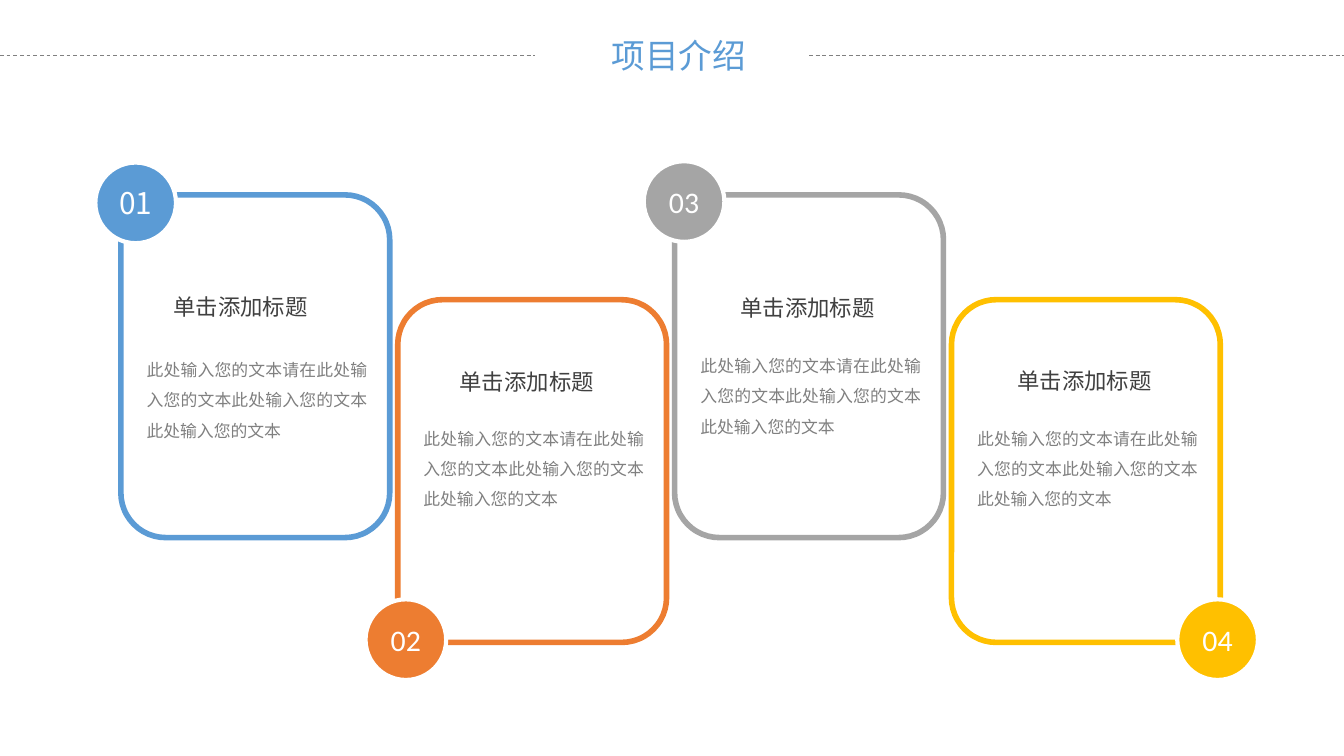
from dataclasses import dataclass

from lxml import etree
from pptx import Presentation
from pptx.dml.color import RGBColor
from pptx.enum.dml import MSO_LINE
from pptx.enum.shapes import MSO_CONNECTOR, MSO_SHAPE
from pptx.enum.text import MSO_ANCHOR, PP_ALIGN
from pptx.oxml.ns import qn
from pptx.util import Inches, Pt

ROUNDED, OVAL = MSO_SHAPE.ROUNDED_RECTANGLE, MSO_SHAPE.OVAL
STRAIGHT = MSO_CONNECTOR.STRAIGHT
DASH = MSO_LINE.DASH
LEFT, CENTER, JUSTIFY = PP_ALIGN.LEFT, PP_ALIGN.CENTER, PP_ALIGN.JUSTIFY
TOP, MIDDLE = MSO_ANCHOR.TOP, MSO_ANCHOR.MIDDLE

COLORS = {
    "blue": "5B9BD5", "orange": "ED7D31", "gray": "A5A5A5", "yellow": "FFC000",
    "heading": "404040", "body": "808080", "rule": "808080", "white": "FFFFFF",
}
CJK, LATIN = "Noto Sans CJK SC", "Calibri"

SLIDE_W = 10
SLIDE_H = SLIDE_W * 9 / 16
RULE_Y, RULE_LENGTH = 0.41, 3.98
GRID_LEFT, COLUMN_PITCH = 0.9, 2.06
ROW_TOPS = (1.45, 2.23)
CARD_W, CARD_H = 2, 2.55
BADGE = 0.6
HEADING_W, HEADING_H = 1.5, 0.28
BODY_INDENT, BODY_W, BODY_H = 0.12, 1.78, 1.14

HEADING = "单击添加标题"
BODY = "此处输入您的文本请在" + "此处输入您的文本" * 3


@dataclass(frozen=True)
class Box:
    left: float
    top: float
    width: float
    height: float

    def emu(self) -> list[int]:
        return [Inches(v) for v in (self.left, self.top, self.width, self.height)]


@dataclass(frozen=True)
class TextStyle:
    size: float
    color: str
    font: str = CJK
    align: PP_ALIGN = LEFT
    anchor: MSO_ANCHOR = TOP
    spacing: float = 1.0
    wrap: bool = True


@dataclass(frozen=True)
class Card:
    """A numbered card; offsets are inches from the card's top-left corner."""
    number: str
    color: str
    row: int
    badge: tuple[float, float]
    heading: tuple[float, float]
    body_top: float
    number_font: str = LATIN


TITLE_STYLE = TextStyle(18, "blue", wrap=False)
HEADING_STYLE = TextStyle(12, "heading", align=CENTER)
BODY_STYLE = TextStyle(9, "body", align=JUSTIFY, anchor=MIDDLE, spacing=1.5)

CARDS = (
    Card("01", "blue", 0, (-0.19, -0.24), (0.14, 0.69), 0.92, CJK),
    Card("02", "orange", 1, (-0.24, 2.23), (0.21, 0.47), 0.65),
    Card("03", "gray", 0, (-0.23, -0.25), (0.24, 0.7), 0.89),
    Card("04", "yellow", 1, (1.68, 2.23), (0.24, 0.46), 0.65),
)


def rgb(name: str) -> RGBColor:
    return RGBColor.from_string(COLORS[name])


def write(shape, text: str, style: TextStyle) -> None:
    frame = shape.text_frame
    frame.word_wrap = style.wrap
    frame.vertical_anchor = style.anchor
    frame.margin_left = frame.margin_right = Inches(0.07)
    frame.margin_top = frame.margin_bottom = Inches(0.04)
    frame.text = text
    paragraph = frame.paragraphs[0]
    paragraph.alignment = style.align
    paragraph.line_spacing = style.spacing
    font = paragraph.runs[0].font
    font.size, font.name = Pt(style.size), style.font
    font.color.rgb = rgb(style.color)
    east_asian = etree.Element(qn("a:ea"), typeface=style.font)
    font._element.find(qn("a:latin")).addnext(east_asian)


def add_text(slide, box: Box, text: str, style: TextStyle) -> None:
    write(slide.shapes.add_textbox(*box.emu()), text, style)


def add_outlined(slide, preset, box: Box, line: str, width: float, fill: str = ""):
    shape = slide.shapes.add_shape(preset, *box.emu())
    shape.shadow.inherit = False
    if fill:
        shape.fill.solid()
        shape.fill.fore_color.rgb = rgb(fill)
    else:
        shape.fill.background()
    shape.line.color.rgb = rgb(line)
    shape.line.width = Pt(width)
    return shape


def add_rule(slide, start: float) -> None:
    rule = slide.shapes.add_connector(
        STRAIGHT, Inches(start), Inches(RULE_Y),
        Inches(start + RULE_LENGTH), Inches(RULE_Y))
    rule.line.color.rgb = rgb("rule")
    rule.line.width = Pt(0.5)
    rule.line.dash_style = DASH
    etree.SubElement(rule._element.spPr, qn("a:effectLst"))


def add_card(slide, column: int, card: Card) -> None:
    left = GRID_LEFT + column * COLUMN_PITCH
    top = ROW_TOPS[card.row]

    def inside(offset: tuple[float, float], width: float, height: float) -> Box:
        return Box(left + offset[0], top + offset[1], width, height)

    add_outlined(slide, ROUNDED, inside((0, 0), CARD_W, CARD_H), card.color, 3)
    add_text(slide, inside(card.heading, HEADING_W, HEADING_H), HEADING, HEADING_STYLE)
    badge = add_outlined(slide, OVAL, inside(card.badge, BADGE, BADGE),
                         "white", 2.25, card.color)
    write(badge, card.number,
          TextStyle(16, "white", card.number_font, CENTER, MIDDLE))
    add_text(slide, inside((BODY_INDENT, card.body_top), BODY_W, BODY_H),
             BODY, BODY_STYLE)


def main() -> None:
    deck = Presentation()
    deck.slide_width, deck.slide_height = Inches(SLIDE_W), Inches(SLIDE_H)
    slide = deck.slides.add_slide(deck.slide_layouts[6])
    add_text(slide, Box(4.48, 0.22, 1.16, 0.38), "项目介绍", TITLE_STYLE)
    for start in (0, SLIDE_W - RULE_LENGTH):
        add_rule(slide, start)
    for column, card in enumerate(CARDS):
        add_card(slide, column, card)
    deck.save("out.pptx")


if __name__ == "__main__":
    main()
